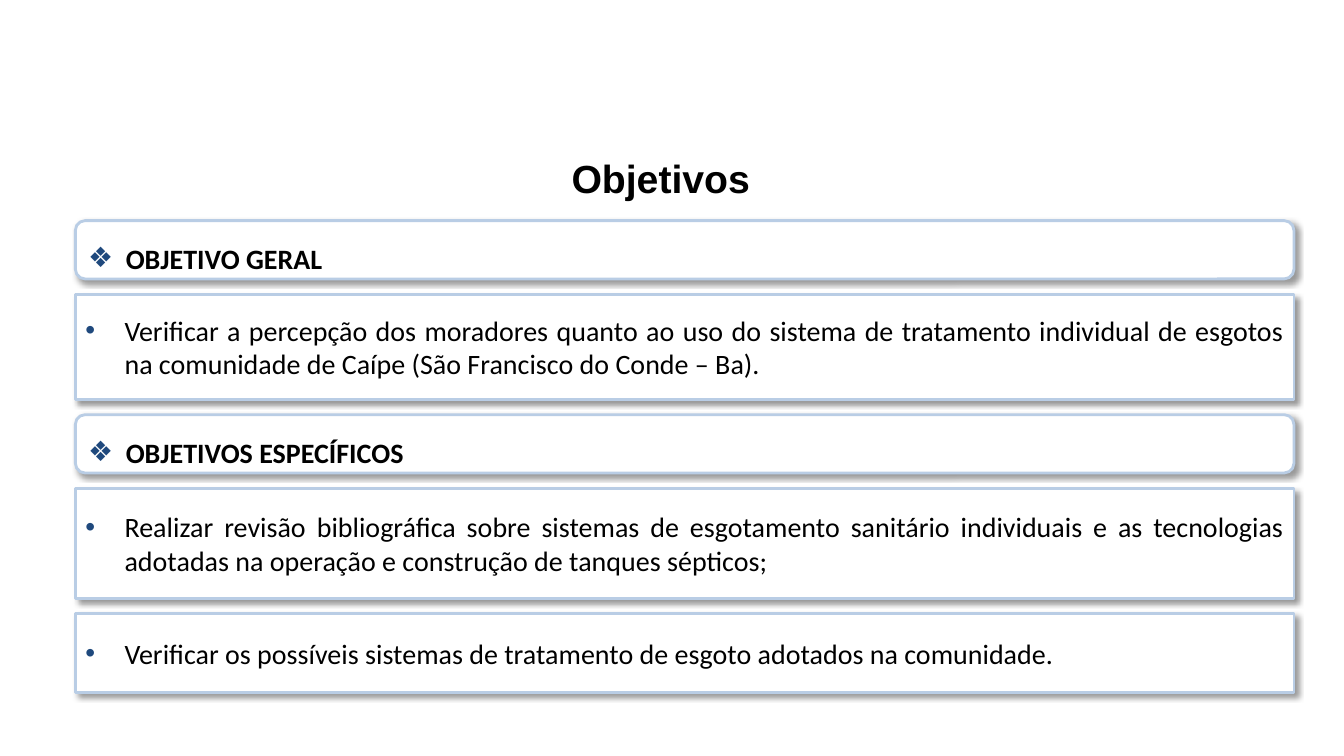
from lxml.etree import SubElement
from pptx import Presentation
from pptx.dml.color import RGBColor
from pptx.enum.shapes import MSO_SHAPE
from pptx.enum.text import MSO_ANCHOR, MSO_AUTO_SIZE, PP_ALIGN
from pptx.oxml.ns import qn
from pptx.util import Cm, Pt

WHITE = RGBColor(0xFF, 0xFF, 0xFF)
BLACK = RGBColor(0x00, 0x00, 0x00)
PALE_BLUE = RGBColor(0xB9, 0xCD, 0xE5)
NAVY = RGBColor(0x1F, 0x49, 0x7D)

GAP = 0.39
HEADING_HEIGHT = 1.47
OBJECTIVES = [
    ("OBJETIVO GERAL", [
        ("Verificar a percepção dos moradores quanto ao uso do sistema de "
         "tratamento individual de esgotos na comunidade de Caípe "
         "(São Francisco do Conde – Ba).", 2.64),
    ]),
    ("OBJETIVOS ESPECÍFICOS", [
        ("Realizar revisão bibliográfica sobre sistemas de esgotamento "
         "sanitário individuais e as tecnologias adotadas na operação e "
         "construção de tanques sépticos;", 2.77),
        ("Verificar os possíveis sistemas de tratamento de esgoto adotados "
         "na comunidade.", 1.98),
    ]),
]


def add_color(parent, color):
    return SubElement(parent, qn("a:srgbClr"), val=str(color))


def add_shadow(panel):
    panel.shadow.inherit = False
    effects = panel._element.spPr.find(qn("a:effectLst"))
    shadow = SubElement(effects, qn("a:outerShdw"), blurRad=str(Pt(4)),
                        dist=str(Pt(3)), dir="2700000", algn="tl",
                        rotWithShape="0")
    SubElement(add_color(shadow, BLACK), qn("a:alpha"), val="40000")


def add_bullet(paragraph, symbol, indent):
    properties = paragraph._p.get_or_add_pPr()
    properties.set("marL", str(Cm(indent)))
    properties.set("indent", str(-Cm(indent)))
    add_color(SubElement(properties, qn("a:buClr")), NAVY)
    SubElement(properties, qn("a:buFont"), typeface="Arial")
    SubElement(properties, qn("a:buChar"), char=symbol)


def style_run(run, font_name, size, bold):
    run.font.name = font_name
    run.font.size = Pt(size)
    run.font.bold = bold
    run.font.color.rgb = BLACK


def add_title(slide, left, top, width, height):
    title = slide.shapes.title
    title.left, title.top = Cm(left), Cm(top)
    title.width, title.height = Cm(width), Cm(height)
    frame = title.text_frame
    frame.text = "Objetivos"
    frame.word_wrap = False
    frame.auto_size = MSO_AUTO_SIZE.SHAPE_TO_FIT_TEXT
    frame.vertical_anchor = MSO_ANCHOR.TOP
    frame.paragraphs[0].alignment = PP_ALIGN.LEFT
    style_run(frame.paragraphs[0].runs[0], "Arial", 28, True)


def add_panel(slide, left, top, width, height, text, is_heading):
    outline = MSO_SHAPE.ROUNDED_RECTANGLE if is_heading else MSO_SHAPE.RECTANGLE
    panel = slide.shapes.add_shape(outline, Cm(left), Cm(top), Cm(width), Cm(height))
    panel.fill.solid()
    panel.fill.fore_color.rgb = WHITE
    panel.line.color.rgb = PALE_BLUE
    panel.line.width = Pt(2)
    add_shadow(panel)
    frame = panel.text_frame
    frame.text = text
    frame.word_wrap = True
    frame.vertical_anchor = MSO_ANCHOR.MIDDLE
    paragraph = frame.paragraphs[0]
    if is_heading:
        add_bullet(paragraph, "❖", 0.95)
        paragraph.line_spacing = 1.5
    else:
        add_bullet(paragraph, "•", 0.99)
    paragraph.alignment = PP_ALIGN.JUSTIFY
    style_run(paragraph.runs[0], "Calibri", 20, is_heading)


def add_objectives(slide, left, top, width):
    for heading, goals in OBJECTIVES:
        add_panel(slide, left, top, width, HEADING_HEIGHT, heading, True)
        top += HEADING_HEIGHT + GAP
        for goal, height in goals:
            add_panel(slide, left, top, width, height, goal, False)
            top += height + GAP


def main():
    presentation = Presentation()
    presentation.slide_width = Cm(33.87)
    presentation.slide_height = Cm(19.05)
    slide = presentation.slides.add_slide(presentation.slide_layouts[5])
    add_title(slide, 14.15, 3.76, 5.05, 1.45)
    add_objectives(slide, 1.9, 5.56, 30.71)
    presentation.save("out.pptx")


if __name__ == "__main__":
    main()
